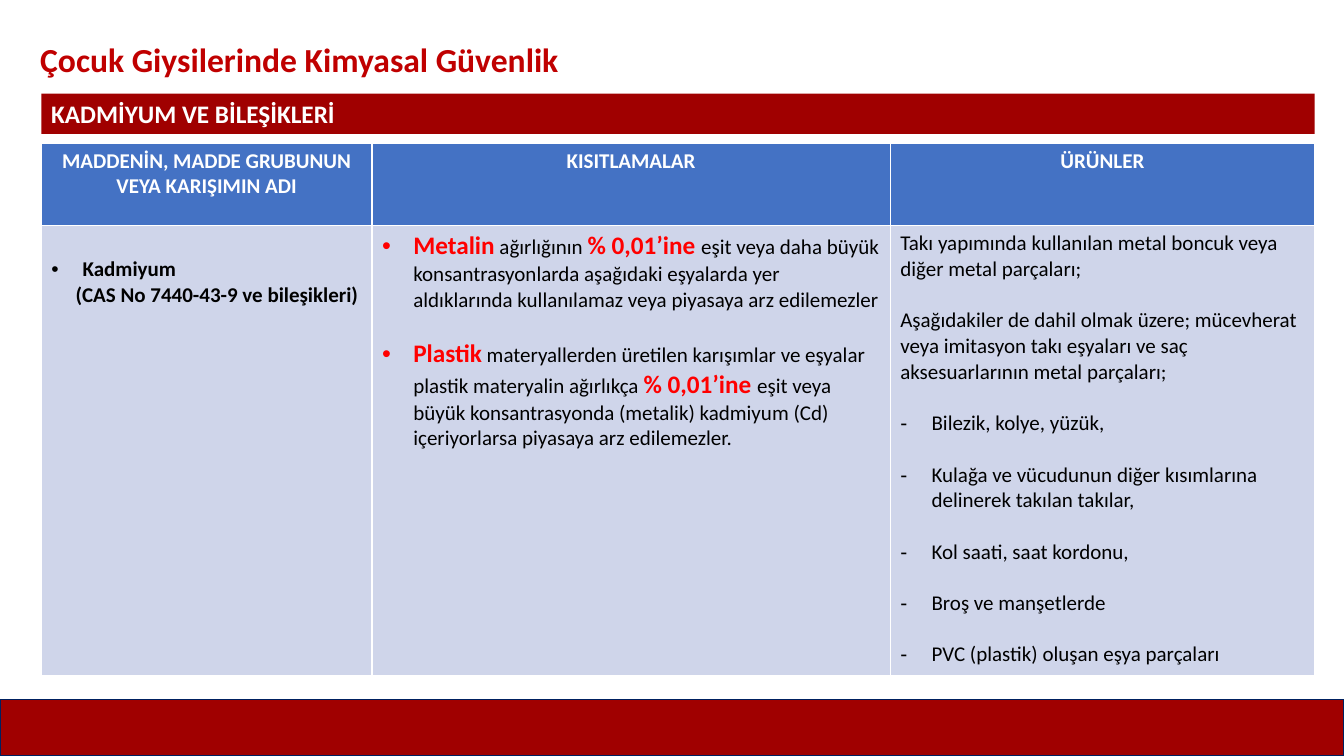
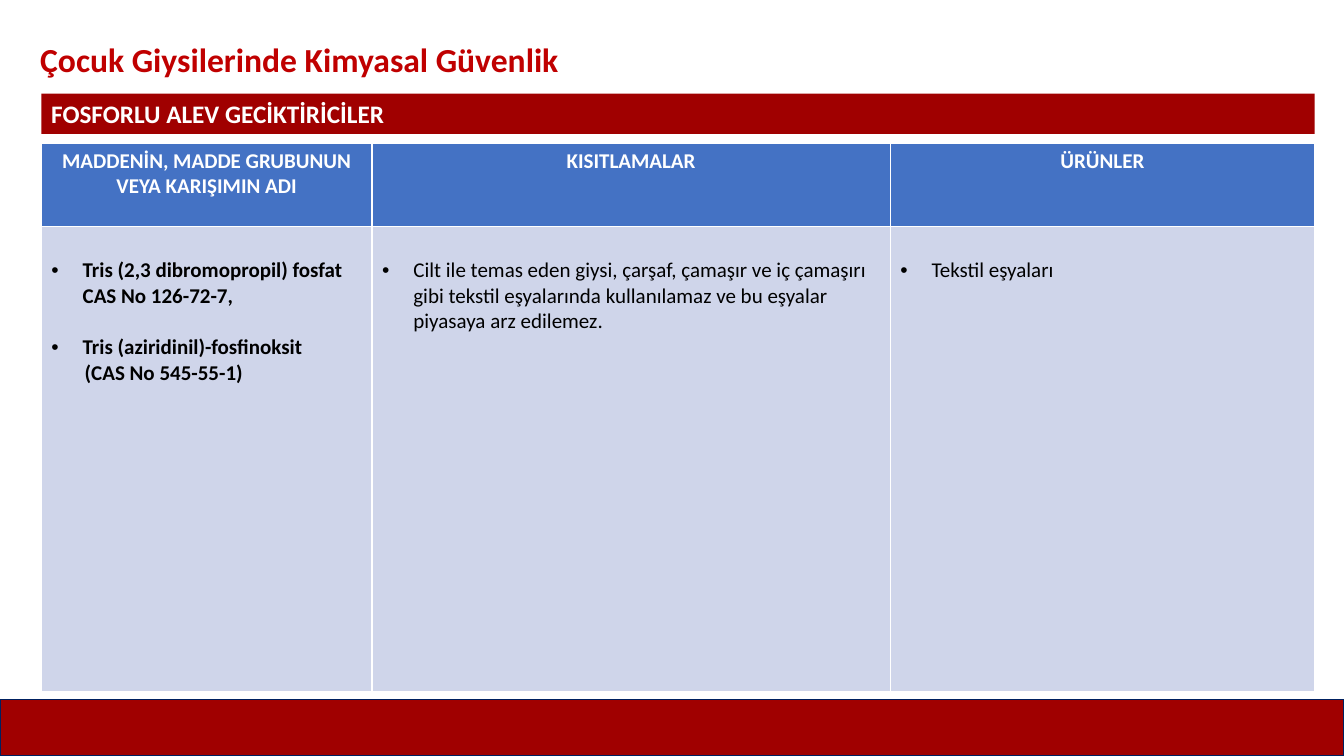
from dataclasses import dataclass

from lxml import etree
from pptx import Presentation
from pptx.dml.color import RGBColor
from pptx.enum.shapes import MSO_SHAPE
from pptx.enum.text import MSO_ANCHOR, PP_ALIGN
from pptx.oxml.ns import qn
from pptx.util import Inches, Pt

RECTANGLE = MSO_SHAPE.RECTANGLE
MIDDLE = MSO_ANCHOR.MIDDLE
LEFT, CENTER, JUSTIFY = PP_ALIGN.LEFT, PP_ALIGN.CENTER, PP_ALIGN.JUSTIFY

DARK_RED = RGBColor(0xA0, 0x00, 0x00)
TITLE_RED = RGBColor(0xC0, 0x00, 0x00)
ACCENT_RED = RGBColor(0xFF, 0x00, 0x00)
NAVY = RGBColor(0x00, 0x20, 0x60)
BLUE = RGBColor(0x44, 0x72, 0xC4)
PALE_BLUE = RGBColor(0xCF, 0xD5, 0xEA)
WHITE = RGBColor(0xFF, 0xFF, 0xFF)
BLACK = RGBColor(0x00, 0x00, 0x00)

FONT = "Calibri"
BODY_SIZE, ACCENT_SIZE, TITLE_SIZE = 15, 18, 24
LINE_GAP = Pt(18.3)
TOP_MARGIN = Inches(0.05)
HANGING = 0.31

FOOTER_BOX = (0, 6.94, 13.33, 0.56)
BAND_BOX = (0.41, 0.93, 12.63, 0.4)
TITLE_BOX = (0.3, 0.34, 12.29, 0.5)
TABLE_LEFT, TABLE_TOP = 0.41, 1.42
COLUMN_WIDTHS = (3.28, 5.14, 4.21)

TITLE = "Çocuk Giysilerinde Kimyasal Güvenlik"
HEADERS = ("MADDENİN, MADDE GRUBUNUN VEYA KARIŞIMIN ADI", "KISITLAMALAR", "ÜRÜNLER")


@dataclass
class Entry:
    """One paragraph of a table cell; spans are (text, emphasised) pairs."""
    spans: list
    bullet: str = ""
    indent: float = 0
    gap: bool = False


@dataclass
class Topic:
    """The wording and row heights of one slide."""
    heading: str
    row_heights: tuple
    cells: list
    lowered: tuple


def item(text, bullet="•", gap=False):
    """Return a bulleted entry."""
    return Entry([(text, False)], bullet, HANGING, gap)


def plain(text, indent=0, gap=False):
    """Return an entry without a bullet."""
    return Entry([(text, False)], indent=indent, gap=gap)


CADMIUM = Topic(
    "KADMİYUM VE BİLEŞİKLERİ",
    (0.82, 4.46),
    [
        [item("Kadmiyum"), plain("(CAS No 7440-43-9 ve bileşikleri)", 0.24)],
        [
            Entry([
                ("Metalin", True),
                (" ağırlığının ", False),
                ("% 0,01’ine ", True),
                ("eşit veya daha büyük konsantrasyonlarda aşağıdaki eşyalarda yer "
                 "aldıklarında kullanılamaz veya piyasaya arz edilemezler", False),
            ], "•", HANGING),
            Entry([
                ("Plastik", True),
                (" materyallerden üretilen karışımlar ve eşyalar plastik materyalin "
                 "ağırlıkça ", False),
                ("% 0,01’ine ", True),
                ("eşit veya büyük konsantrasyonda (metalik) kadmiyum (Cd) "
                 "içeriyorlarsa piyasaya arz edilemezler.", False),
            ], "•", HANGING, True),
        ],
        [
            plain("Takı yapımında kullanılan metal boncuk veya diğer metal parçaları;"),
            plain("Aşağıdakiler de dahil olmak üzere; mücevherat veya imitasyon takı "
                  "eşyaları ve saç aksesuarlarının metal parçaları;", gap=True),
            item("Bilezik, kolye, yüzük,", "-", True),
            item("Kulağa ve vücudunun diğer kısımlarına delinerek takılan takılar,", "-", True),
            item("Kol saati, saat kordonu,", "-", True),
            item("Broş ve manşetlerde", "-", True),
            item("PVC (plastik) oluşan eşya parçaları", "-", True),
        ],
    ],
    (True, False, False),
)

FLAME_RETARDANTS = Topic(
    "FOSFORLU ALEV GECİKTİRİCİLER",
    (0.83, 4.61),
    [
        [
            item("Tris (2,3 dibromopropil) fosfat CAS No 126-72-7,"),
            item("Tris (aziridinil)-fosfinoksit", gap=True),
            plain("(CAS No 545-55-1)", 0.33),
        ],
        [item("Cilt ile temas eden giysi, çarşaf, çamaşır ve iç çamaşırı gibi tekstil "
              "eşyalarında kullanılamaz ve bu eşyalar piyasaya arz edilemez.")],
        [item("Tekstil eşyaları")],
    ],
    (True, True, True),
)


def style_font(font, size, color, bold):
    """Apply the deck's typeface with a size, colour and weight."""
    font.name = FONT
    font.size = Pt(size)
    font.color.rgb = color
    font.bold = bold


def write_line(frame, text, size, color, align):
    """Write one bold line into a text frame."""
    para = frame.paragraphs[0]
    para.text = text
    para.alignment = align
    style_font(para.font, size, color, True)


def add_bar(page, box):
    """Add a dark red bar and return it."""
    bar = page.shapes.add_shape(RECTANGLE, *map(Inches, box))
    bar.shadow.inherit = False
    bar.fill.solid()
    bar.fill.fore_color.rgb = DARK_RED
    bar.line.fill.background()
    return bar


def add_footer(page, box):
    """Add the outlined bar at the foot of the page."""
    bar = add_bar(page, box)
    bar.line.color.rgb = NAVY
    bar.line.width = Pt(1)


def add_heading_band(page, box, heading):
    """Add the bar that names the topic."""
    frame = add_bar(page, box).text_frame
    frame.word_wrap = True
    frame.vertical_anchor = MIDDLE
    write_line(frame, heading, ACCENT_SIZE, WHITE, JUSTIFY)


def add_title(page, box):
    """Add the title of the page."""
    frame = page.shapes.add_textbox(*map(Inches, box)).text_frame
    frame.word_wrap = True
    write_line(frame, TITLE, TITLE_SIZE, TITLE_RED, LEFT)


def write_entry(para, entry, bold):
    """Write an entry with its indent, bullet and emphasised spans."""
    properties = para._p.get_or_add_pPr()
    properties.set("marL", str(Inches(entry.indent)))
    if entry.gap:
        para.space_before = LINE_GAP
    if entry.bullet:
        properties.set("indent", str(-Inches(entry.indent)))
        etree.SubElement(properties, qn("a:buFont")).set("typeface", "Arial")
        etree.SubElement(properties, qn("a:buChar")).set("char", entry.bullet)
    style_font(para.font, BODY_SIZE, BLACK, bold)
    for text, emphasised in entry.spans:
        span = para.add_run()
        span.text = text
        if emphasised:
            style_font(span.font, ACCENT_SIZE, ACCENT_RED, True)


def fill_cell(cell, color):
    """Give a table cell a solid fill."""
    cell.fill.solid()
    cell.fill.fore_color.rgb = color


def add_restrictions_table(page, left, top, topic):
    """Add the table of substances, restrictions and products."""
    size = (sum(COLUMN_WIDTHS), sum(topic.row_heights))
    frame = page.shapes.add_table(2, len(HEADERS), *map(Inches, (left, top, *size)))
    table = frame.table
    table.horz_banding = False
    for row, height in zip(table.rows, topic.row_heights):
        row.height = Inches(height)
    for index, width in enumerate(COLUMN_WIDTHS):
        table.columns[index].width = Inches(width)
        header, body = table.cell(0, index), table.cell(1, index)
        fill_cell(header, BLUE)
        write_line(header.text_frame, HEADERS[index], BODY_SIZE, WHITE, CENTER)
        fill_cell(body, PALE_BLUE)
        body.margin_top = TOP_MARGIN + (LINE_GAP if topic.lowered[index] else 0)
        for position, entry in enumerate(topic.cells[index]):
            text = body.text_frame
            para = text.add_paragraph() if position else text.paragraphs[0]
            write_entry(para, entry, bold=index == 0)


def add_topic_page(deck, topic):
    """Add one page for a topic."""
    page = deck.slides.add_slide(deck.slide_layouts[6])
    add_footer(page, FOOTER_BOX)
    add_heading_band(page, BAND_BOX, topic.heading)
    add_title(page, TITLE_BOX)
    add_restrictions_table(page, TABLE_LEFT, TABLE_TOP, topic)


def main():
    """Build and save the deck."""
    deck = Presentation()
    deck.slide_width, deck.slide_height = Inches(13.33), Inches(7.5)
    for topic in (CADMIUM, FLAME_RETARDANTS):
        add_topic_page(deck, topic)
    deck.save("out.pptx")


if __name__ == "__main__":
    main()
